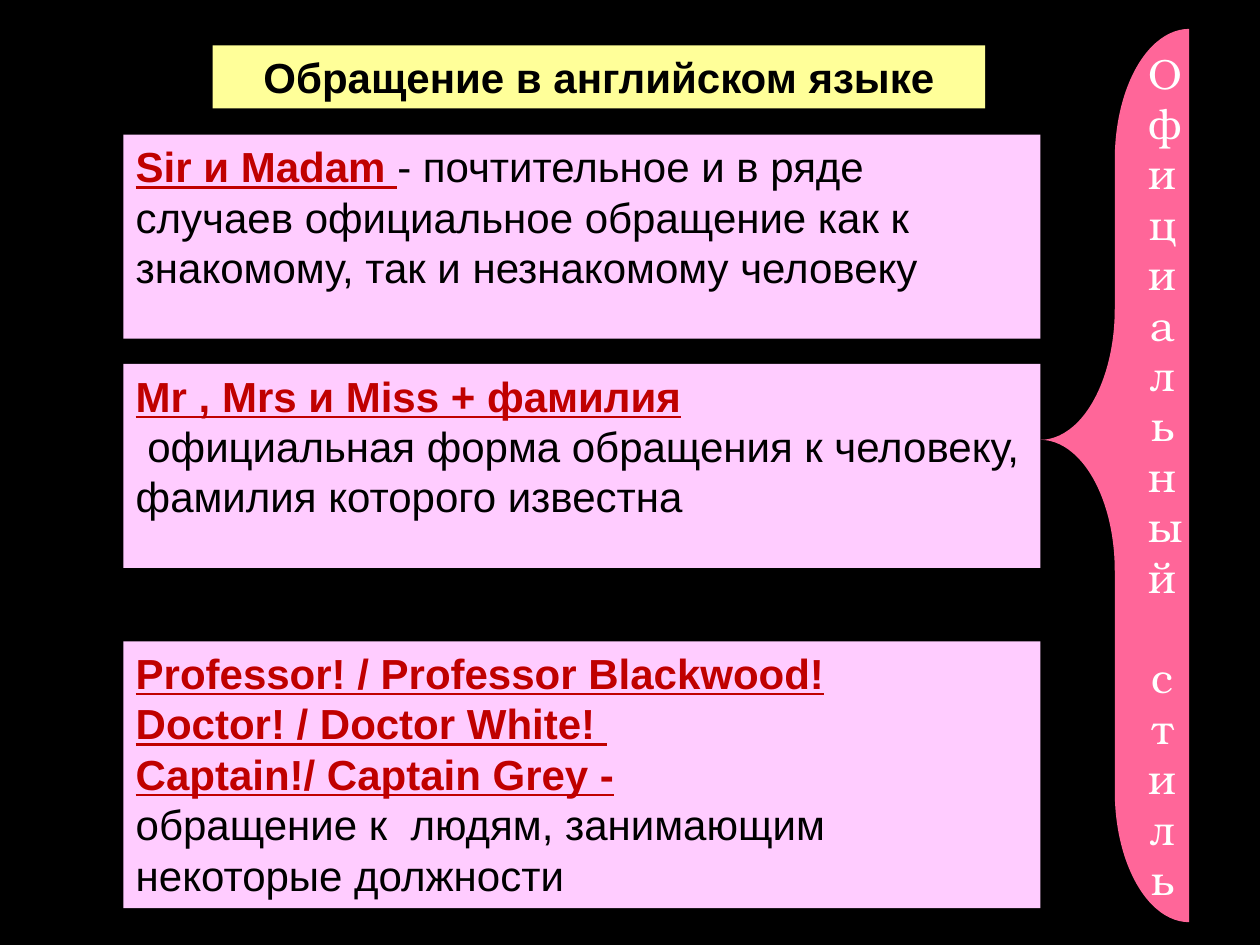
from pptx import Presentation
from pptx.dml.color import RGBColor
from pptx.enum.shapes import MSO_SHAPE
from pptx.enum.text import MSO_ANCHOR, MSO_AUTO_SIZE, PP_ALIGN
from pptx.util import Pt

RECTANGLE, BRACE = MSO_SHAPE.RECTANGLE, MSO_SHAPE.RIGHT_BRACE
TOP, MIDDLE = MSO_ANCHOR.TOP, MSO_ANCHOR.MIDDLE
LEFT, CENTER = PP_ALIGN.LEFT, PP_ALIGN.CENTER
NO_FIT = MSO_AUTO_SIZE.NONE

BLACK, WHITE, RED = "000000", "FFFFFF", "C00000"
YELLOW, LILAC, PINK = "FFFF99", "FFCCFF", "FF6699"

PLAIN = {"name": "Arial", "size": Pt(24), "bold": False, "underline": False, "color": BLACK}
HEADING = {**PLAIN, "bold": True}
TERM = {**HEADING, "underline": True, "color": RED}
STYLE_NAME = {**PLAIN, "name": "TeX Gyre Bonum", "color": WHITE}

CARDS_LEFT, CARDS_WIDTH = 70.5, 524
CARDS = [
    (77, 116.5, [
        [("Sir и Madam ", TERM),
         ("- почтительное и в ряде случаев официальное обращение как к "
          "знакомому, так и незнакомому человеку", PLAIN)],
    ]),
    (208, 116.5, [
        [("Mr , Mrs и Miss + фамилия", TERM)],
        [(" официальная форма обращения к человеку,", PLAIN)],
        [("фамилия которого известна", PLAIN)],
    ]),
    (366.5, 152.5, [
        [("Professor! / Professor Blackwood!", TERM)],
        [("Doctor! / Doctor White! ", TERM)],
        [("Captain!/ Captain Grey -", TERM)],
        [("обращение к  людям, занимающим некоторые должности", PLAIN)],
    ]),
]


def color(value):
    return RGBColor.from_string(value)


def paint(shape, fill):
    shape.fill.solid()
    shape.fill.fore_color.rgb = color(fill)
    shape.line.fill.background()


def write(shape, lines, align, anchor):
    frame = shape.text_frame
    layout = {"word_wrap": True, "auto_size": NO_FIT, "vertical_anchor": anchor,
              "margin_left": Pt(7.2), "margin_right": Pt(7.2),
              "margin_top": Pt(3.6), "margin_bottom": Pt(3.6)}
    for name, value in layout.items():
        setattr(frame, name, value)
    for index, line in enumerate(lines):
        para = frame.add_paragraph() if index else frame.paragraphs[0]
        para.alignment = align
        for text, style in line:
            span = para.add_run()
            span.text = text
            for name, value in style.items():
                if name == "color":
                    span.font.color.rgb = color(value)
                else:
                    setattr(span.font, name, value)


def add_box(page, kind, box, fill):
    shape = page.shapes.add_shape(kind, *map(Pt, box))
    shape.shadow.inherit = False
    paint(shape, fill)
    return shape


def place_title(page, box):
    title = page.shapes.title
    for name, value in zip(("left", "top", "width", "height"), box):
        setattr(title, name, Pt(value))
    paint(title, YELLOW)
    write(title, [[("Обращение в английском языке", HEADING)]], CENTER, TOP)


def place_card(page, box, lines):
    write(add_box(page, RECTANGLE, box, LILAC), lines, LEFT, TOP)


def place_brace(page, box):
    brace = add_box(page, BRACE, box, PINK)
    brace.adjustments[0] = 0.88
    brace.adjustments[1] = 0.46
    brace.element.spPr.xfrm.set("flipH", "1")
    lines = [[("Официальный", STYLE_NAME)], [(" стиль", STYLE_NAME)]]
    write(brace, lines, CENTER, MIDDLE)


def main():
    deck = Presentation()
    deck.slide_width, deck.slide_height = Pt(720), Pt(540)
    page = deck.slides.add_slide(deck.slide_layouts[5])
    page.background.fill.solid()
    page.background.fill.fore_color.rgb = color(BLACK)
    place_title(page, (121.5, 26, 441.5, 36))
    for top, height, lines in CARDS:
        place_card(page, (CARDS_LEFT, top, CARDS_WIDTH, height), lines)
    place_brace(page, (594.5, 16.5, 85, 510.5))
    deck.save("out.pptx")


if __name__ == "__main__":
    main()
